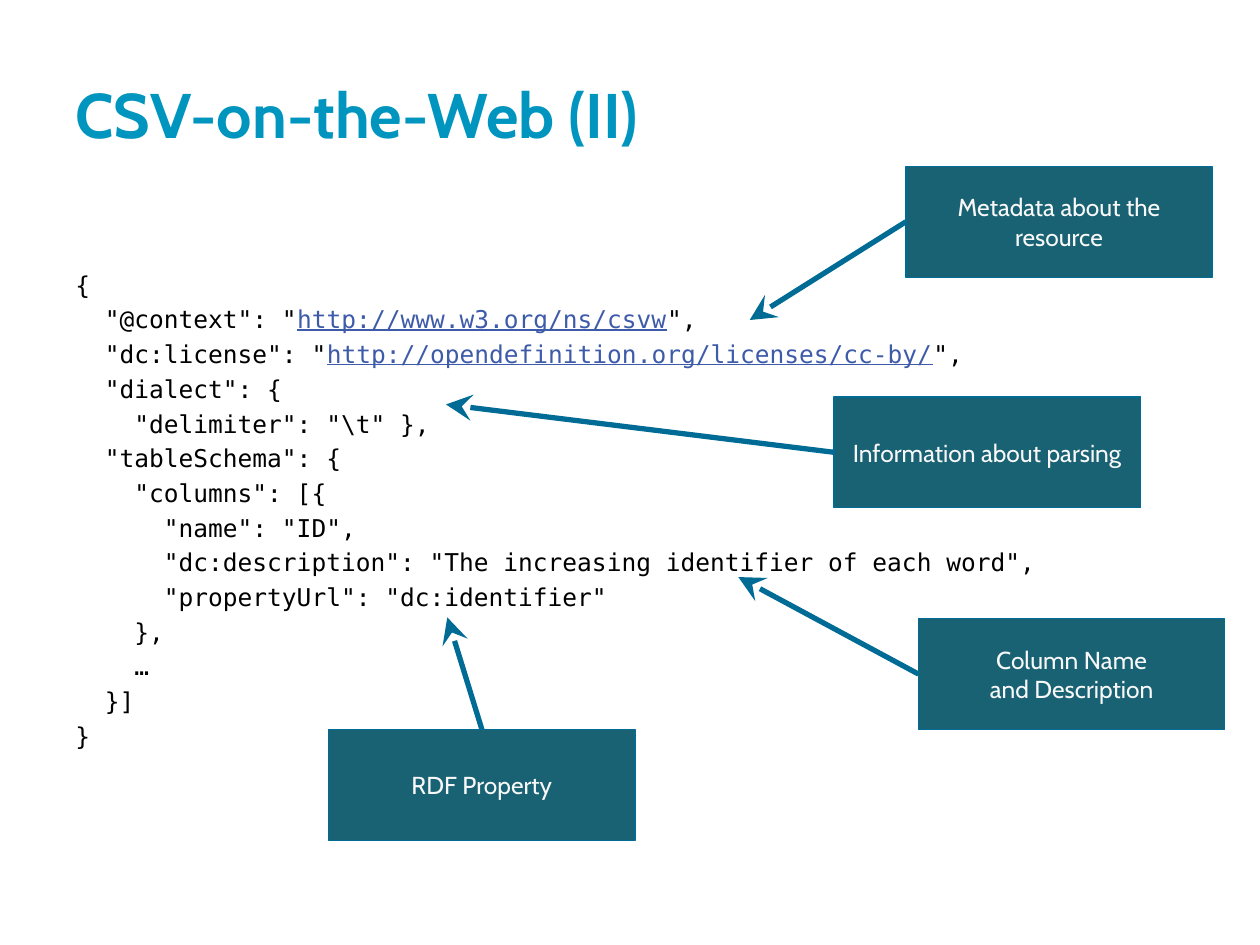
import pptx
import pptx.dml.color
import pptx.enum.shapes
import pptx.enum.text
import pptx.oxml
import pptx.oxml.ns
import pptx.util
from lxml import etree

Inches = pptx.util.Inches
Pt = pptx.util.Pt
qn = pptx.oxml.ns.qn
ANCHOR = pptx.enum.text.MSO_ANCHOR

COLORS = {
    "title": "0095BF",
    "code": "000000",
    "link": "3D5BA9",
    "fill": "196273",
    "line": "006B94",
    "label": "F8F8F8",
}
HEADING_FONT = "Cabin"
CODE_FONT = "DejaVu Sans Mono"
BOX_W, BOX_H = 2.43, 0.88

CODE = [
    ('{',),
    ('  "@context": "', 'http://www.w3.org/ns/csvw', '",'),
    ('  "dc:license": "', 'http://opendefinition.org/licenses/cc-by/', '",'),
    ('  "dialect": {',),
    ('    "delimiter": "\\t" },',),
    ('  "tableSchema": {',),
    ('    "columns": [{',),
    ('      "name": "ID",',),
    ('      "dc:description": "The increasing identifier of each word",',),
    ('      "propertyUrl": "dc:identifier"',),
    ('    },',),
    ('    …',),
    ('  }]',),
    ('}',),
]

CALLOUTS = [
    ("Metadata about the resource", 7.19, 1.32, "left", (5.95, 2.54)),
    ("Information about parsing", 6.62, 3.15, "left", (3.54, 3.21)),
    ("Column Name\nand Description", 7.29, 4.91, "left", (5.86, 4.58)),
    ("RDF Property", 2.61, 5.79, "top", (3.55, 4.9)),
]


def rgb(name):
    return pptx.dml.color.RGBColor.from_string(COLORS[name])


class SlideBuilder:
    def __init__(self, slide):
        self.s = slide

    def format_run(self, r, size, font, color, bold=False, underline=False):
        r.font.size = Pt(size)
        r.font.name = font
        r.font.color.rgb = rgb(color)
        r.font.bold = bold
        r.font.underline = underline

    def frame(self, shape, anchor):
        tf = shape.text_frame
        tf.word_wrap = True
        tf.vertical_anchor = anchor
        tf.margin_left = tf.margin_right = Inches(0.1)
        tf.margin_top = tf.margin_bottom = Inches(0.1)
        return tf

    def text_box(self, x, y, w, h):
        box = self.s.shapes.add_textbox(Inches(x), Inches(y), Inches(w), Inches(h))
        return self.frame(box, ANCHOR.TOP)

    def title(self, text, x, y, w, h):
        tf = self.text_box(x, y, w, h)
        tf.text = text
        self.format_run(tf.paragraphs[0].runs[0], 36, HEADING_FONT, "title", bold=True)

    def code(self, lines, x, y, w, h):
        tf = self.text_box(x, y, w, h)
        for i, parts in enumerate(lines):
            p = tf.add_paragraph() if i else tf.paragraphs[0]
            p.line_spacing = 1.18
            for part in parts:
                is_link = part.startswith("http")
                r = p.add_run()
                r.text = part
                self.format_run(r, 14, CODE_FONT, "link" if is_link else "code",
                                underline=is_link)

    def label(self, text, x, y):
        box = self.s.shapes.add_shape(
            pptx.enum.shapes.MSO_SHAPE.RECTANGLE,
            Inches(x), Inches(y), Inches(BOX_W), Inches(BOX_H))
        box.shadow.inherit = False
        box.fill.solid()
        box.fill.fore_color.rgb = rgb("fill")
        box.line.color.rgb = rgb("line")
        box.line.width = Pt(0.75)
        tf = self.frame(box, ANCHOR.MIDDLE)
        tf.text = text
        for p in tf.paragraphs:
            p.alignment = pptx.enum.text.PP_ALIGN.CENTER
            for r in p.runs:
                self.format_run(r, 14, HEADING_FONT, "label")

    def arrow(self, start, end):
        line = self.s.shapes.add_connector(
            pptx.enum.shapes.MSO_CONNECTOR.STRAIGHT,
            *[Inches(v) for v in (*start, *end)])
        line.line.color.rgb = rgb("line")
        line.line.width = Pt(3)
        etree.SubElement(line.line._get_or_add_ln(), qn("a:tailEnd"),
                         type="stealth", w="lg", len="lg")
        etree.SubElement(line._element.spPr, qn("a:effectLst"))


def main():
    prs = pptx.Presentation()
    prs.slide_width = Inches(10)
    prs.slide_height = Inches(7.5)
    builder = SlideBuilder(prs.slides.add_slide(prs.slide_layouts[6]))

    builder.title("CSV-on-the-Web (II)", 0.5, 0.5, 9, 1.18)
    builder.code(CODE, 0.5, 2, 9, 4.8)
    for text, x, y, side, target in CALLOUTS:
        builder.label(text, x, y)
        start = (x, y + BOX_H / 2) if side == "left" else (x + BOX_W / 2, y)
        builder.arrow(start, target)

    prs.save("out.pptx")


if __name__ == "__main__":
    main()
